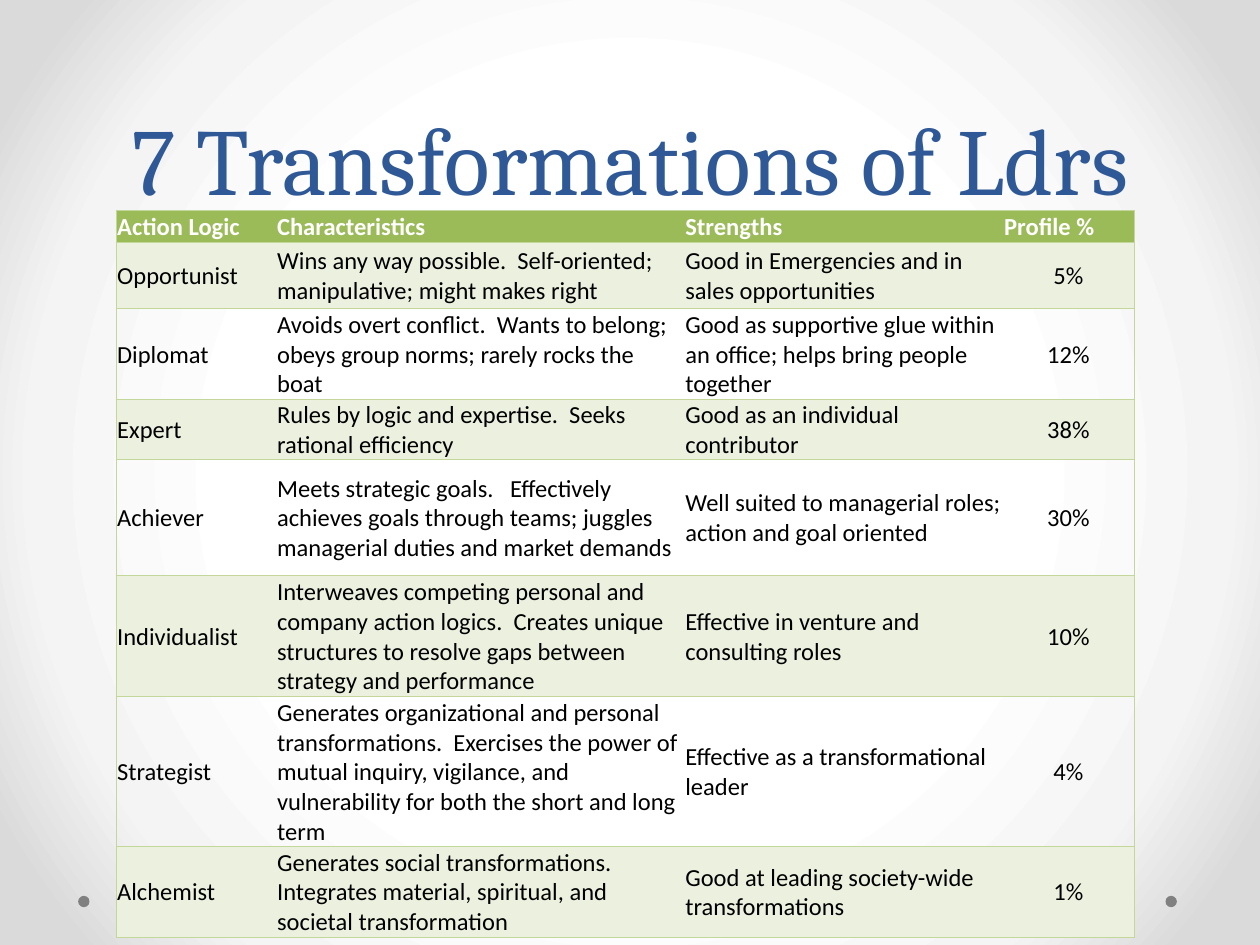
from typing import NamedTuple

from lxml import etree
from pptx import Presentation
from pptx import util as u
from pptx.dml.color import RGBColor
from pptx.enum import shapes, text
from pptx.oxml import parse_xml
from pptx.oxml.ns import qn

TITLE_BLUE = RGBColor(0x2F, 0x58, 0x97)
HEADER_GREEN = RGBColor(0x9B, 0xBB, 0x59)
BAND_GREEN = RGBColor(0xEB, 0xF1, 0xDE)
BORDER_GREEN = RGBColor(0xC4, 0xD7, 0x9B)
DOT_GRAY = RGBColor(0x80, 0x80, 0x80)
WHITE = RGBColor(0xFF, 0xFF, 0xFF)
BLACK = RGBColor(0, 0, 0)
SILVER = RGBColor(0xF4, 0xF4, 0xF4)
GRAY = RGBColor(0xDA, 0xDA, 0xDA)

BACKGROUND_STOPS = [(50, WHITE), (76, SILVER), (92, GRAY)]
COLUMN_WIDTHS = [1.27, 3.24, 2.53, 1.04]
HEADER_HEIGHT = 0.25
HEADERS = ["Action Logic", "Characteristics", "Strengths", "Profile %"]


class Leader(NamedTuple):
    height: float
    logic: str
    characteristics: str
    strengths: str
    profile: str


LEADERS = [
    Leader(0.53, "Opportunist",
           "Wins any way possible.  Self-oriented; manipulative; might makes right",
           "Good in Emergencies and in sales opportunities", "5%"),
    Leader(0.72, "Diplomat",
           "Avoids overt conflict.  Wants to belong; obeys group norms; rarely rocks the boat",
           "Good as supportive glue within an office; helps bring people together", "12%"),
    Leader(0.48, "Expert",
           "Rules by logic and expertise.  Seeks rational efficiency",
           "Good as an individual contributor", "38%"),
    Leader(0.92, "Achiever",
           "Meets strategic goals.   Effectively achieves goals through teams; "
           "juggles managerial duties and market demands",
           "Well suited to managerial roles; action and goal oriented", "30%"),
    Leader(0.96, "Individualist",
           "Interweaves competing personal and company action logics.  Creates unique "
           "structures to resolve gaps between strategy and performance",
           "Effective in venture and consulting roles", "10%"),
    Leader(1.19, "Strategist",
           "Generates organizational and personal transformations.  Exercises the power of "
           "mutual inquiry, vigilance, and vulnerability for both the short and long term",
           "Effective as a transformational leader", "4%"),
    Leader(0.72, "Alchemist",
           "Generates social transformations.  Integrates material, spiritual, "
           "and societal transformation",
           "Good at leading society-wide transformations", "1%"),
]


def write_text(frame, words: str, *, size: float, color: RGBColor, font: str = "Calibri",
               bold: bool = False, align=text.PP_ALIGN.LEFT, line_spacing=None) -> None:
    paragraph = frame.paragraphs[0]
    paragraph.alignment = align
    if line_spacing is not None:
        paragraph.line_spacing = line_spacing
    run = paragraph.add_run()
    run.text = words
    run.font.name = font
    run.font.size = u.Pt(size)
    run.font.bold = bold
    run.font.color.rgb = color


def set_background(slide) -> None:
    """Fill the slide with a circular gradient around its centre."""
    slide.background.fill.solid()
    properties = slide.background._cSld.bg.bgPr
    stops = "".join(f'<a:gs pos="{position * 1000}"><a:srgbClr val="{color}"/></a:gs>'
                    for position, color in BACKGROUND_STOPS)
    gradient = parse_xml(
        '<a:gradFill xmlns:a="http://schemas.openxmlformats.org/drawingml/2006/main" '
        f'rotWithShape="1"><a:gsLst>{stops}</a:gsLst><a:path path="circle">'
        '<a:fillToRect l="50000" t="50000" r="50000" b="50000"/></a:path></a:gradFill>')
    properties.replace(properties[0], gradient)


def add_dot(slide, left: float) -> None:
    dot = slide.shapes.add_shape(shapes.MSO_SHAPE.OVAL, u.Inches(left), u.Inches(7.11),
                                 u.Inches(0.09), u.Inches(0.09))
    dot.shadow.inherit = False
    dot.fill.solid()
    dot.fill.fore_color.rgb = DOT_GRAY
    dot.line.fill.background()


def add_title(slide) -> None:
    title = slide.shapes.add_textbox(0, 0, u.Inches(9), u.Inches(1.75))
    title.left = u.Inches(0.5)
    frame = title.text_frame
    frame.word_wrap = True
    frame.vertical_anchor = text.MSO_ANCHOR.BOTTOM
    write_text(frame, "7 Transformations of Ldrs", size=54, color=TITLE_BLUE,
               font="Cambria", align=text.PP_ALIGN.CENTER, line_spacing=u.Pt(58))


def set_borders(cell, visible: str) -> None:
    """Draw the sides named in visible (of L, R, T, B) and hide the others."""
    properties = cell._tc.get_or_add_tcPr()
    for index, side in enumerate("LRTB"):
        line = etree.Element(qn(f"a:ln{side}"), w=str(u.Pt(0.5)))
        if side in visible:
            fill = etree.SubElement(line, qn("a:solidFill"))
            etree.SubElement(fill, qn("a:srgbClr"), val=str(BORDER_GREEN))
        else:
            etree.SubElement(line, qn("a:noFill"))
        properties.insert(index, line)


def fill_cell(cell, words: str, row: int, column: int) -> None:
    header = row == 0
    last = column == len(HEADERS) - 1
    cell.margin_left = cell.margin_right = cell.margin_top = u.Inches(0.01)
    cell.margin_bottom = 0
    cell.vertical_anchor = text.MSO_ANCHOR.BOTTOM if header else text.MSO_ANCHOR.MIDDLE
    if header or row % 2:
        cell.fill.solid()
        cell.fill.fore_color.rgb = HEADER_GREEN if header else BAND_GREEN
    else:
        cell.fill.background()
    set_borders(cell, "TB" + ("L" if column == 0 else "R" if last else ""))
    write_text(cell.text_frame, words, size=14, color=WHITE if header else BLACK, bold=header,
               align=text.PP_ALIGN.CENTER if last and not header else text.PP_ALIGN.LEFT)


def add_leader_table(slide) -> None:
    heights = [HEADER_HEIGHT] + [leader.height for leader in LEADERS]
    table = slide.shapes.add_table(
        len(heights), len(HEADERS), u.Inches(0.92), u.Inches(1.67),
        u.Inches(sum(COLUMN_WIDTHS)), u.Inches(sum(heights))).table
    table.horz_banding = False
    for column, width in zip(table.columns, COLUMN_WIDTHS):
        column.width = u.Inches(width)
    for row, height in zip(table.rows, heights):
        row.height = u.Inches(height)
    contents = [HEADERS] + [leader[1:] for leader in LEADERS]
    for row, words_in_row in enumerate(contents):
        for column, words in enumerate(words_in_row):
            fill_cell(table.cell(row, column), words, row, column)


def main() -> None:
    presentation = Presentation()
    presentation.slide_width = u.Inches(10)
    presentation.slide_height = u.Inches(7.5)
    slide = presentation.slides.add_slide(presentation.slide_layouts[6])
    set_background(slide)
    for left in (9.25, 0.62):
        add_dot(slide, left)
    add_title(slide)
    add_leader_table(slide)
    presentation.save("out.pptx")


if __name__ == "__main__":
    main()
